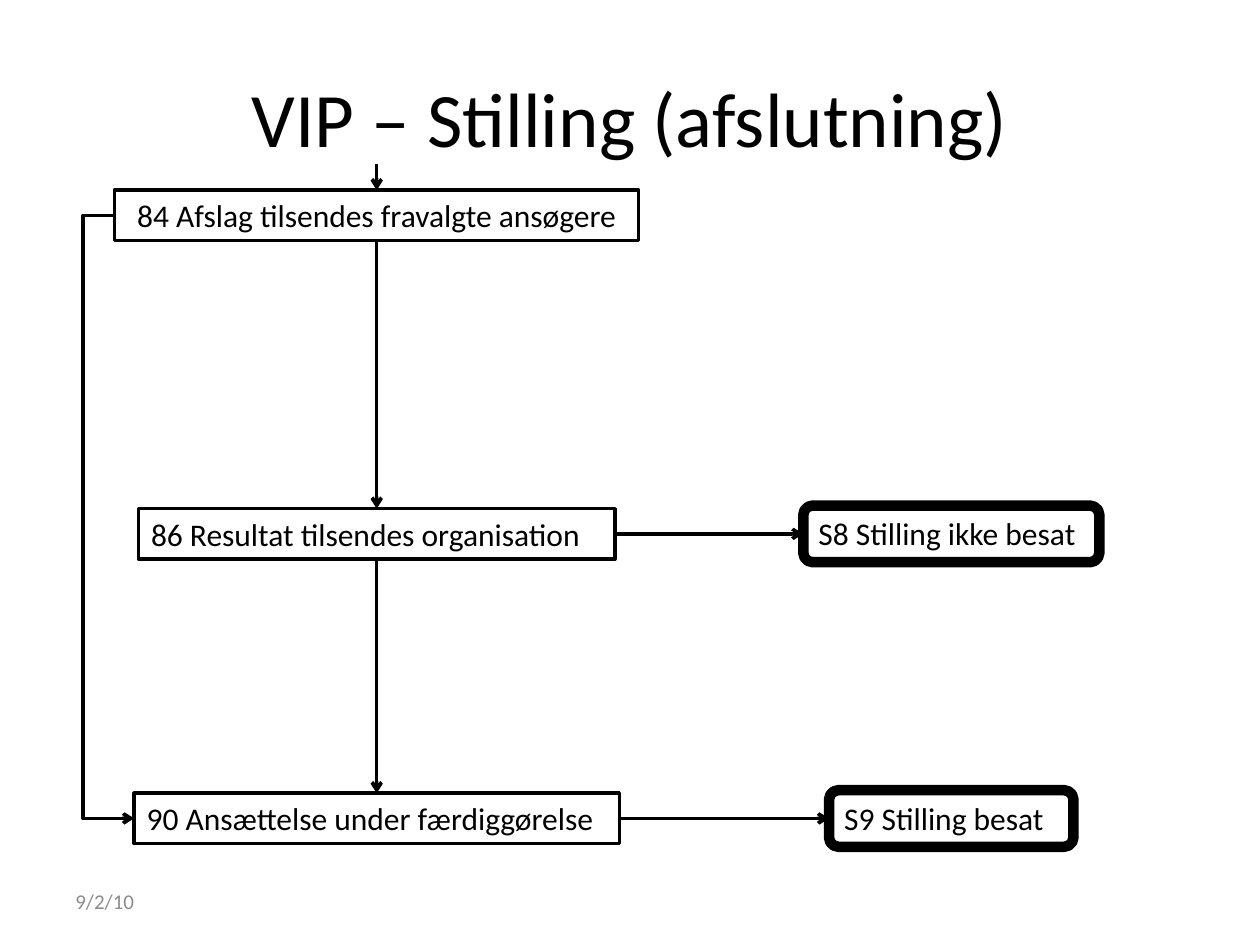
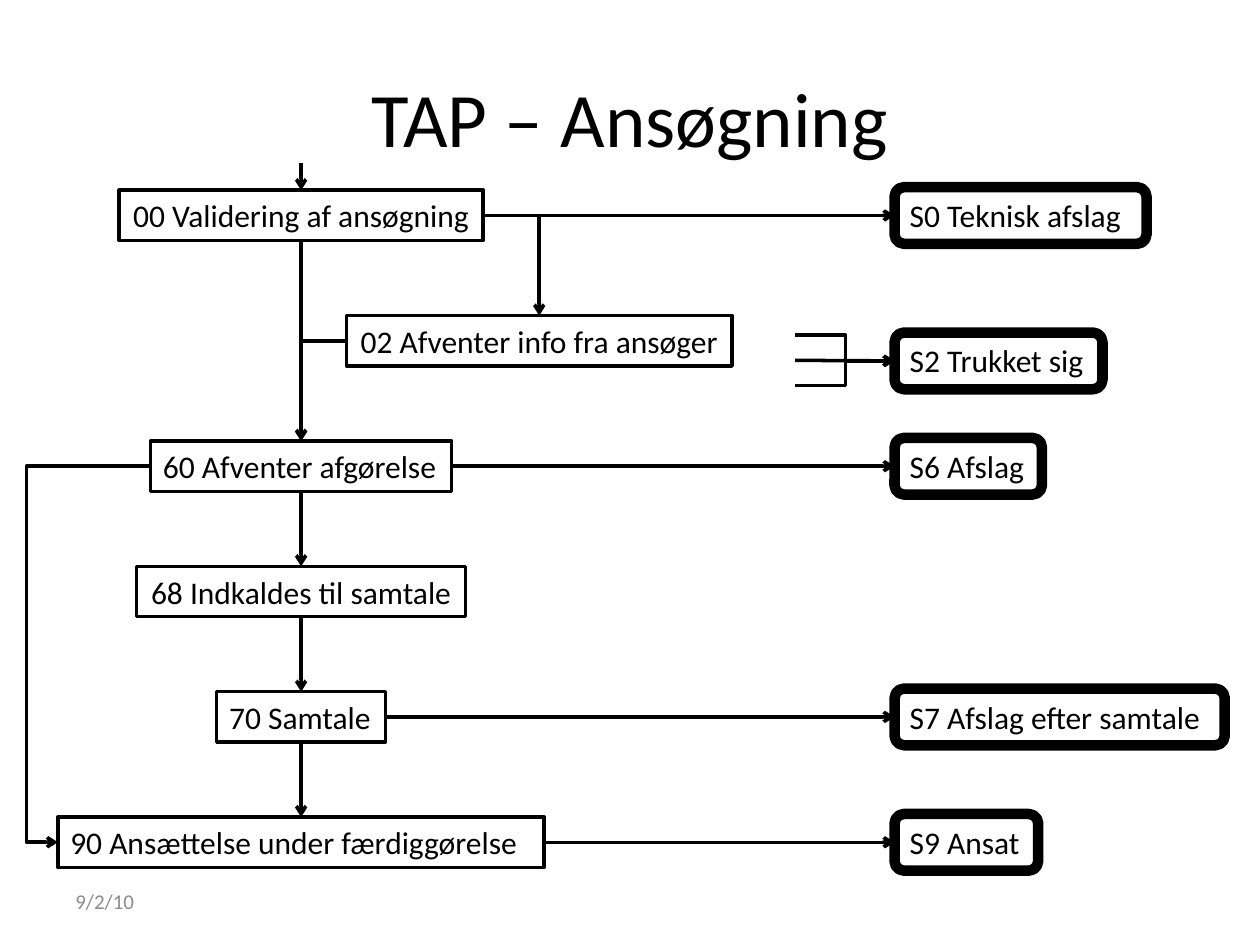
from lxml import etree
from pptx import Presentation, util as u
from pptx.dml.color import RGBColor
from pptx.enum import shapes, text
from pptx.oxml.ns import qn

# Shared look
BLACK = RGBColor(0x00, 0x00, 0x00)
GREY = RGBColor(0x8C, 0x8C, 0x8C)
FONT = "Calibri"
WIDTH, HEIGHT = 10, 7.5
FIRST_ROW, ROW_PITCH = 1.71, 0.995
STEP = dict(kind=shapes.MSO_SHAPE.FLOWCHART_PROCESS, height=0.4, line=2)
STATE = dict(kind=shapes.MSO_SHAPE.FLOWCHART_ALTERNATE_PROCESS, height=0.45, line=6)
LEFT, CENTER = text.PP_ALIGN.LEFT, text.PP_ALIGN.CENTER
TOP_SIDE, LEFT_SIDE, BOTTOM_SIDE, RIGHT_SIDE = range(4)
DOWN = (BOTTOM_SIDE, TOP_SIDE)
ACROSS = (RIGHT_SIDE, LEFT_SIDE)
AROUND = (LEFT_SIDE, LEFT_SIDE)
OVER_DOWN = (RIGHT_SIDE, TOP_SIDE)
BACK_DOWN = (LEFT_SIDE, TOP_SIDE)
CORNER = "corner"
DATE = "9/2/10"

# Columns: x and the share of a box's width that lies left of it
VIP_STEPS, VIP_STATES = (2.99, 0.5), (7.55, 0.5)
TAP_STEPS, TAP_INFO, TAP_STATES = (2.39, 0.5), (4.28, 0.5), (7.1, 0)

# Boxes: text, column, row, width, look, alignment, wrap
# Links: from box or point, to box, sides, bend (None, CORNER or x of the bend)
SLIDES = [
    dict(
        title="VIP – Stilling (afslutning)",
        boxes=[
            ("84 Afslag tilsendes fravalgte ansøgere", VIP_STEPS, 0, 4.16, STEP, CENTER, True),
            ("86 Resultat tilsendes organisation", VIP_STEPS, 2.54, 3.78, STEP, LEFT, True),
            ("90 Ansættelse under færdiggørelse", VIP_STEPS, 4.81, 3.85, STEP, LEFT, True),
            ("S8 Stilling ikke besat", VIP_STATES, 2.54, 2.35, STATE, LEFT, True),
            ("S9 Stilling besat", VIP_STATES, 4.81, 1.94, STATE, LEFT, True),
        ],
        links=[
            ((2.99, 1.3), "84", DOWN, None),
            ("84", "86", DOWN, None),
            ("86", "90", DOWN, None),
            ("86", "S8", ACROSS, None),
            ("90", "S9", ACROSS, None),
            ("84", "90", AROUND, 0.66),
        ],
    ),
    dict(
        title="TAP – Ansøgning",
        boxes=[
            ("00 Validering af ansøgning", TAP_STEPS, 0, 2.89, STEP, CENTER, False),
            ("02 Afventer info fra ansøger", TAP_INFO, 1, 3.06, STEP, CENTER, False),
            ("60 Afventer afgørelse", TAP_STEPS, 2, 2.39, STEP, LEFT, False),
            ("68 Indkaldes til samtale", TAP_STEPS, 3, 2.61, STEP, CENTER, False),
            ("70 Samtale", TAP_STEPS, 4, 1.34, STEP, LEFT, False),
            ("90 Ansættelse under færdiggørelse", TAP_STEPS, 5, 3.86, STEP, LEFT, True),
            ("S0 Teknisk afslag", TAP_STATES, 0, 2, STATE, LEFT, True),
            ("S2 Trukket sig", TAP_STATES, 1.16, 1.65, STATE, LEFT, True),
            ("S6 Afslag", TAP_STATES, 2, 1.17, STATE, LEFT, True),
            ("S7 Afslag efter samtale", TAP_STATES, 4, 2.62, STATE, LEFT, True),
            ("S9 Ansat", TAP_STATES, 5, 1.14, STATE, LEFT, True),
        ],
        links=[
            ((2.39, 1.29), "00", DOWN, None),
            ("00", "60", DOWN, None),
            ("60", "68", DOWN, None),
            ("68", "70", DOWN, None),
            ("70", "90", DOWN, None),
            ("00", "S0", ACROSS, None),
            ("60", "S6", ACROSS, None),
            ("70", "S7", ACROSS, None),
            ("90", "S9", ACROSS, None),
            ("00", "02", OVER_DOWN, CORNER),
            ("02", "60", BACK_DOWN, CORNER),
            ("60", "90", AROUND, 0.21),
            # Three loose ends gathered into one state
            ((6.31, 2.66), "S2", ACROSS, 6.71),
            ((6.31, 2.86), "S2", ACROSS, None),
            ((6.31, 3.06), "S2", ACROSS, 6.71),
        ],
    ),
]


def put_text(sp, words, size=18, color=BLACK, align=LEFT, wrap=True,
             anchor=text.MSO_ANCHOR.MIDDLE):
    tf = sp.text_frame
    tf.word_wrap = wrap
    tf.vertical_anchor = anchor
    p = tf.paragraphs[0]
    p.alignment = align
    r = p.add_run()
    r.text = words
    r.font.name, r.font.size = FONT, u.Pt(size)
    r.font.color.rgb = color


def add_label(s, words, left, top, width, height, **fmt):
    sp = s.shapes.add_textbox(*map(u.Inches, (left, top, width, height)))
    put_text(sp, words, **fmt)


def add_box(s, words, column, row, width, look, align, wrap):
    x, share = column
    left = x - share * width
    top = FIRST_ROW + row * ROW_PITCH - look["height"] / 2
    sp = s.shapes.add_shape(look["kind"], *map(u.Inches, (left, top, width, look["height"])))
    sp.shadow.inherit = False
    sp.fill.background()
    sp.line.color.rgb = BLACK
    sp.line.width = u.Pt(look["line"])
    put_text(sp, words, align=align, wrap=wrap, anchor=text.MSO_ANCHOR.TOP)
    sp.text_frame.auto_size = text.MSO_AUTO_SIZE.SHAPE_TO_FIT_TEXT
    return sp


def set_bend(cxn, bend):
    geom = cxn._element.spPr.find(qn("a:prstGeom"))
    if bend == CORNER:
        geom.set("prst", "bentConnector2")
        return
    share = (u.Inches(bend) - cxn.begin_x) / (cxn.end_x - cxn.begin_x)
    guides = geom.find(qn("a:avLst"))
    if guides is None:
        guides = etree.SubElement(geom, qn("a:avLst"))
    etree.SubElement(guides, qn("a:gd"), name="adj1", fmla=f"val {round(share * 100000)}")


def add_link(s, boxes, start, end, sides, bend):
    kind = shapes.MSO_CONNECTOR.STRAIGHT if bend is None else shapes.MSO_CONNECTOR.ELBOW
    x, y = (0, 0) if start in boxes else map(u.Inches, start)
    cxn = s.shapes.add_connector(kind, x, y, x, y)
    if start in boxes:
        cxn.begin_connect(boxes[start], sides[0])
    cxn.end_connect(boxes[end], sides[1])
    if bend is not None:
        set_bend(cxn, bend)
    cxn.line.color.rgb = BLACK
    cxn.line.width = u.Pt(2)
    spPr = cxn._element.spPr
    etree.SubElement(spPr.find(qn("a:ln")), qn("a:tailEnd"), type="arrow")
    etree.SubElement(spPr, qn("a:effectLst"))


def main():
    prs = Presentation()
    prs.slide_width, prs.slide_height = u.Inches(WIDTH), u.Inches(HEIGHT)
    for page in SLIDES:
        s = prs.slides.add_slide(prs.slide_layouts[6])
        # Title and date
        add_label(s, page["title"], 0.05 * WIDTH, 0.04 * HEIGHT, 0.9 * WIDTH, 1.25,
                  size=44, align=CENTER)
        add_label(s, DATE, 0.05 * WIDTH, 6.95, 2.33, 0.4, size=12, color=GREY)
        # Flow chart, boxes keyed by their code
        boxes = {box[0].split()[0]: add_box(s, *box) for box in page["boxes"]}
        for link in page["links"]:
            add_link(s, boxes, *link)
    prs.save("out.pptx")


if __name__ == "__main__":
    main()
